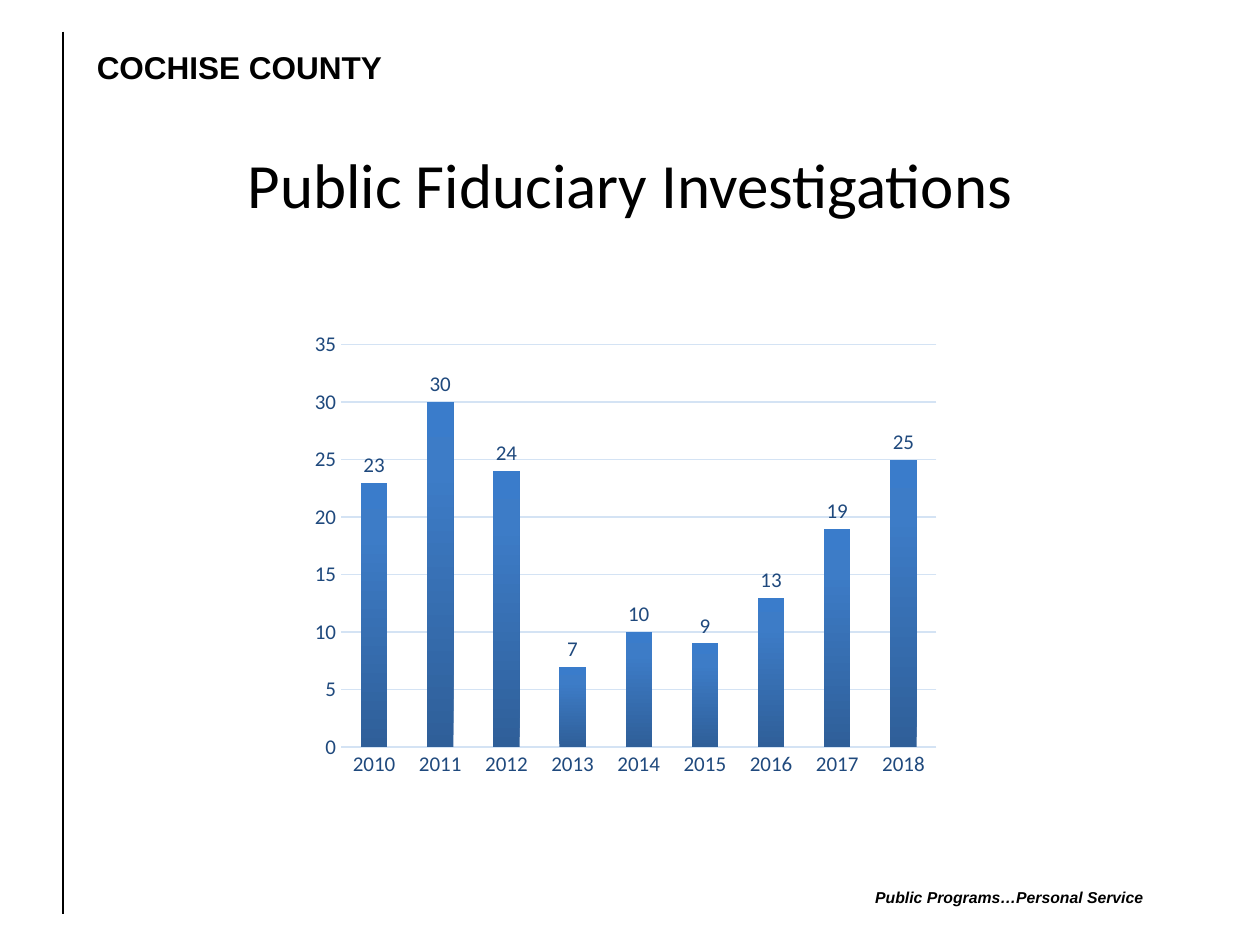
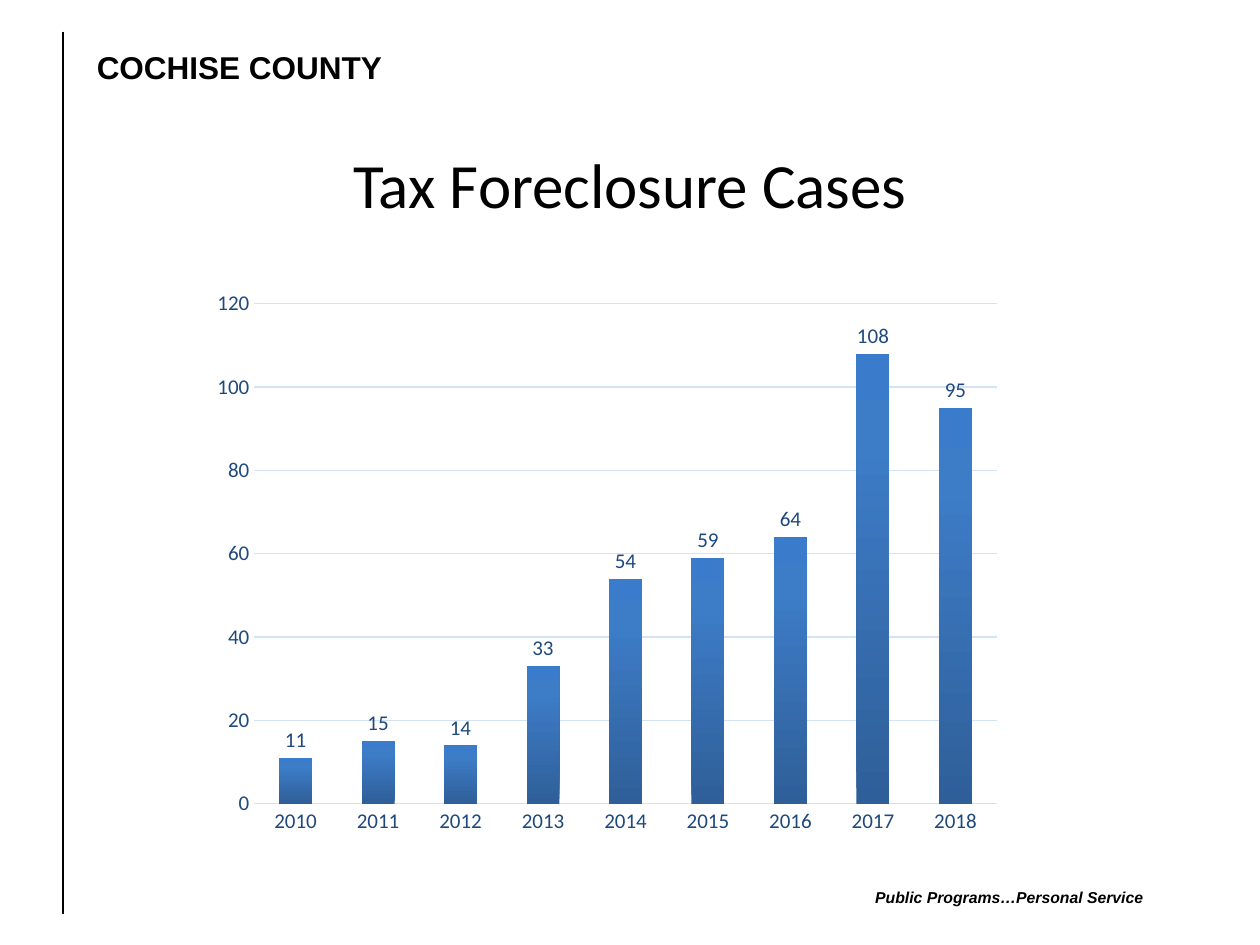
"""Build two county slides, each with a column chart of yearly counts."""
import pptx
import pptx.chart.data
import pptx.dml.color
import pptx.enum.chart
import pptx.enum.shapes
import pptx.enum.text
import pptx.oxml
import pptx.oxml.ns
import pptx.util
from pptx.util import Inches

COLOURS = {"text": "000000", "label": "1F497D", "grid": "D4E3F4"}
BAR_GRADIENT = [(0, "2F5F99"), (80, "3D7CC7"), (100, "3A7CCB")]
ALIGN = pptx.enum.text.PP_ALIGN
YEARS = [str(year) for year in range(2010, 2019)]

TITLE_AREA = (0.5, 0.83, 9, 1.25)
RULE = (0.5, 0.25, 0.5, 7.25)
TITLE_FONT = {"name": "Calibri", "size": 36, "bold": False, "colour": "text"}
LABEL_FONT = {"name": "Calibri", "size": 12, "bold": False, "colour": "label"}
BAND_TEXTS = [
    {"text": "COCHISE COUNTY", "area": (0.67, 0.33, 5.33, 0.4), "align": ALIGN.LEFT,
     "font": {"name": "Arial", "size": 18, "bold": True, "colour": "text"}},
    {"text": "Public Programs…Personal Service", "area": (5.92, 7, 3.25, 0.25), "align": ALIGN.RIGHT,
     "font": {"name": "Arial", "size": 9, "bold": True, "italic": True, "colour": "text"}},
]
SLIDES = [
    {"title": "Public Fiduciary Investigations", "area": (2, 2.39, 5.99, 4.26),
     "counts": [23, 30, 24, 7, 10, 9, 13, 19, 25], "top": 35, "step": 5,
     "plot": {"x": 0.118, "y": 0.081, "w": 0.789, "h": 0.75}},
    {"title": "Tax Foreclosure Cases", "area": (1.33, 2.17, 7.92, 4.81),
     "counts": [11, 15, 14, 33, 54, 59, 64, 108, 95], "top": 120, "step": 20,
     "plot": {"x": 0.087, "y": 0.05, "w": 0.744, "h": 0.825}},
]


def lengths(area):
    return [Inches(value) for value in area]


def set_all(target, values):
    for name, value in values.items():
        setattr(target, name, value)


def colour(name):
    return pptx.dml.color.RGBColor.from_string(COLOURS[name])


def style_font(font, style):
    for name, value in style.items():
        if name == "colour":
            font.color.rgb = colour(value)
        else:
            setattr(font, name, pptx.util.Pt(value) if name == "size" else value)


def style_line(line, name):
    line.color.rgb = colour(name)
    line.width = pptx.util.Pt(0.75)


def xml(tag, content, attributes=""):
    return pptx.oxml.parse_xml(
        f"<{tag} {pptx.oxml.ns.nsdecls('a', 'c')} {attributes}>{content}</{tag}>")


def add_band(page, layout):
    """Draw the shared heading, rule and motto, then hand them to the layout."""
    parts = []
    for band in BAND_TEXTS:
        box = page.shapes.add_textbox(*lengths(band["area"]))
        set_all(box.text_frame, {"word_wrap": True,
                                 "auto_size": pptx.enum.text.MSO_AUTO_SIZE.SHAPE_TO_FIT_TEXT})
        para = box.text_frame.paragraphs[0]
        para.alignment = band["align"]
        span = para.add_run()
        span.text = band["text"]
        style_font(span.font, band["font"])
        parts.append(box)
    rule = page.shapes.add_connector(pptx.enum.shapes.MSO_CONNECTOR.STRAIGHT, *lengths(RULE))
    style_line(rule.line, "text")
    rule.element.spPr.append(xml("a:effectLst", ""))
    parts.append(rule)
    for part in parts:
        layout.shapes.element.append(part.element)


def add_title(page, text):
    title = page.shapes.title
    set_all(title, dict(zip(("left", "top", "width", "height"), lengths(TITLE_AREA))))
    title.text_frame.vertical_anchor = pptx.enum.text.MSO_ANCHOR.MIDDLE
    para = title.text_frame.paragraphs[0]
    para.alignment = ALIGN.CENTER
    span = para.add_run()
    span.text = text
    style_font(span.font, TITLE_FONT)


def fill_bars(chart):
    chart.plots[0].series[0].format.fill.solid()
    stops = "".join(f'<a:gs pos="{place * 1000}"><a:srgbClr val="{shade}"/></a:gs>'
                    for place, shade in BAR_GRADIENT)
    gradient = xml("a:gradFill", f'<a:gsLst>{stops}</a:gsLst><a:lin ang="16200000" scaled="0"/>',
                   'rotWithShape="1"')
    solid = chart.element.xpath(".//c:ser/c:spPr/a:solidFill")[0]
    solid.getparent().replace(solid, gradient)


def place_plot(chart, plot):
    area = chart.element.xpath(".//c:plotArea")[0]
    for layout in area.xpath("./c:layout"):
        area.remove(layout)
    modes = '<c:layoutTarget val="inner"/><c:xMode val="edge"/><c:yMode val="edge"/>'
    sizes = "".join(f'<c:{name} val="{value}"/>' for name, value in plot.items())
    area.insert(0, xml("c:layout", f"<c:manualLayout>{modes}{sizes}</c:manualLayout>"))


def add_column_chart(page, content):
    data = pptx.chart.data.CategoryChartData()
    data.categories = YEARS
    data.add_series("Series 1", content["counts"])
    chart = page.shapes.add_chart(pptx.enum.chart.XL_CHART_TYPE.COLUMN_CLUSTERED,
                                  *lengths(content["area"]), data).chart
    set_all(chart, {"has_title": False, "has_legend": False})
    style_font(chart.font, {**LABEL_FONT, "size": 10, "colour": "text"})
    for axis in (chart.category_axis, chart.value_axis):
        set_all(axis, {"major_tick_mark": pptx.enum.chart.XL_TICK_MARK.NONE,
                       "minor_tick_mark": pptx.enum.chart.XL_TICK_MARK.NONE})
        style_font(axis.tick_labels.font, LABEL_FONT)
    style_line(chart.category_axis.format.line, "grid")
    set_all(chart.value_axis, {"minimum_scale": 0, "maximum_scale": content["top"],
                               "major_unit": content["step"], "has_major_gridlines": True})
    chart.value_axis.format.line.fill.background()
    style_line(chart.value_axis.major_gridlines.format.line, "grid")
    plot = chart.plots[0]
    set_all(plot, {"gap_width": 150, "vary_by_categories": False, "has_data_labels": True})
    set_all(plot.data_labels, {"show_value": True,
                               "position": pptx.enum.chart.XL_LABEL_POSITION.OUTSIDE_END})
    style_font(plot.data_labels.font, LABEL_FONT)
    fill_bars(chart)
    place_plot(chart, content["plot"])


def main():
    deck = pptx.Presentation()
    set_all(deck, {"slide_width": Inches(10), "slide_height": Inches(7.5)})
    layout = deck.slide_layouts.get_by_name("Title Only")
    for number, content in enumerate(SLIDES):
        page = deck.slides.add_slide(layout)
        if number == 0:
            add_band(page, layout)
        add_title(page, content["title"])
        add_column_chart(page, content)
    deck.save("out.pptx")


if __name__ == "__main__":
    main()
